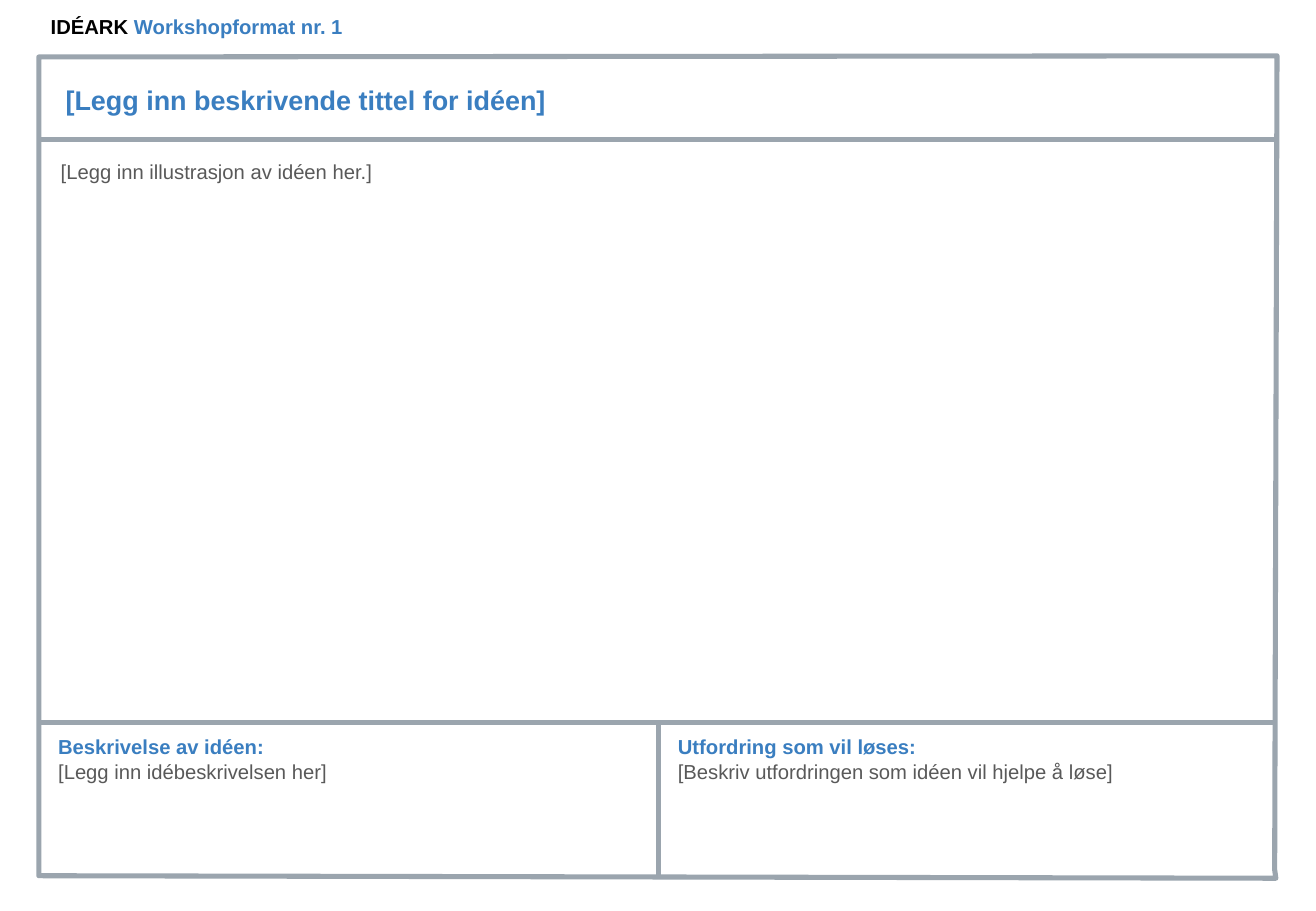
from pptx import Presentation
from pptx.dml.color import RGBColor
from pptx.enum import shapes, text
from pptx.oxml import parse_xml
from pptx.oxml.ns import nsdecls
from pptx.util import Pt

BLACK = RGBColor(0x00, 0x00, 0x00)
BLUE = RGBColor(0x3A, 0x7E, 0xC0)
GREY = RGBColor(0x59, 0x59, 0x59)
RULE = RGBColor(0x9B, 0xA5, 0xAE)

SHEET = (23, 33.1, 733.7, 487.5)
TITLE_RULE = 49.7
BOTTOM_RULE = 395.3
MIDDLE_RULE = 367.2


def style_run(run, color, bold=False, size=12):
    """Give a run the sheet's font."""
    run.font.name = "Arial"
    run.font.size = Pt(size)
    run.font.bold = bold
    run.font.color.rgb = color


def place_text(slide, box, lines, anchor=text.MSO_ANCHOR.TOP):
    """Place lines of (wording, color, bold) runs in a box and return its frame."""
    frame = slide.shapes.add_textbox(*map(Pt, box)).text_frame
    frame.word_wrap = True
    frame.vertical_anchor = anchor
    for index, line in enumerate(lines):
        paragraph = frame.add_paragraph() if index else frame.paragraphs[0]
        for wording, color, bold in line:
            run = paragraph.add_run()
            run.text = wording
            style_run(run, color, bold)
    return frame


def style_rule(line):
    """Make a line a thick grey rule."""
    line.color.rgb = RULE
    line.width = Pt(3)


def draw_rule(slide, start, end):
    """Draw a straight rule between two points."""
    rule = slide.shapes.add_connector(
        shapes.MSO_CONNECTOR.STRAIGHT, *map(Pt, start + end))
    style_rule(rule.line)
    rule._element.spPr.append(parse_xml(f"<a:effectLst {nsdecls('a')}/>"))


def draw_frame(slide, box):
    """Draw the slightly uneven outline and the rules that divide it."""
    left, top, width, height = box
    right, bottom = left + width, top + height
    corners = [(right, top), (left, top + 0.7), (left, bottom - 1.5),
               (right - 0.7, bottom)]
    builder = slide.shapes.build_freeform(Pt(right - 1.4), Pt(bottom - 5))
    builder.add_line_segments([(Pt(x), Pt(y)) for x, y in corners], close=True)
    outline = builder.convert_to_shape()
    outline.shadow.inherit = False
    outline.fill.background()
    style_rule(outline.line)
    outline.line._get_or_add_ln().append(parse_xml(f"<a:round {nsdecls('a')}/>"))

    for offset in (TITLE_RULE, BOTTOM_RULE):
        draw_rule(slide, (left, top + offset), (right, top + offset))
    middle = left + MIDDLE_RULE
    draw_rule(slide, (middle, top + BOTTOM_RULE), (middle, bottom))


def add_heading(slide, box):
    """Place the format name above the sheet."""
    left, top, _, _ = box
    place_text(slide, (left, top - 27.3, 244, 20),
               [[("IDÉARK ", BLACK, True), ("Workshopformat nr. 1", BLUE, True)]],
               text.MSO_ANCHOR.MIDDLE)


def add_idea_title(slide, box):
    """Place the title of the idea in the top band."""
    left, top, _, _ = box
    title = slide.shapes.title
    title.left, title.top, title.width, title.height = map(
        Pt, (left + 8.7, top + 7.2, 572.4, 37.4))
    frame = title.text_frame
    frame.text = "[Legg inn beskrivende tittel for idéen]"
    frame.word_wrap = True
    frame.auto_size = text.MSO_AUTO_SIZE.NONE
    frame.vertical_anchor = text.MSO_ANCHOR.MIDDLE
    frame.margin_left = frame.margin_right = Pt(7.2)
    frame.margin_top = frame.margin_bottom = Pt(3.6)
    frame.paragraphs[0].alignment = text.PP_ALIGN.LEFT
    style_run(frame.paragraphs[0].runs[0], BLUE, True, 16)


def add_illustration(slide, box):
    """Place the prompt for the illustration."""
    left, top, _, _ = box
    frame = place_text(slide, (left + 7.2, top + 55.5, 487.4, 59.8),
                       [[("[Legg inn illustrasjon av idéen her.]", GREY, False)]])
    frame.margin_left = frame.margin_right = Pt(5.8)
    frame.margin_top = frame.margin_bottom = Pt(5.8)


def add_fields(slide, box):
    """Place the two labelled fields in the bottom band."""
    left, top, _, _ = box
    fields = [
        (4.4, "Beskrivelse av idéen:", "[Legg inn idébeskrivelsen her]"),
        (MIDDLE_RULE + 4.4, "Utfordring som vil løses:",
         "[Beskriv utfordringen som idéen vil hjelpe å løse]"),
    ]
    for offset, label, prompt in fields:
        place_text(slide, (left + offset, top + 398.9, 354, 74.2),
                   [[(label, BLUE, True)], [(prompt, GREY, False)]])


def build_idea_sheet(deck):
    """Build the idea sheet."""
    slide = deck.slides.add_slide(deck.slide_layouts[5])
    for part in (draw_frame, add_heading, add_idea_title, add_illustration, add_fields):
        part(slide, SHEET)


def main():
    """Save the deck."""
    deck = Presentation()
    deck.slide_width, deck.slide_height = Pt(779.76), Pt(540)
    build_idea_sheet(deck)
    deck.save("out.pptx")


if __name__ == "__main__":
    main()
